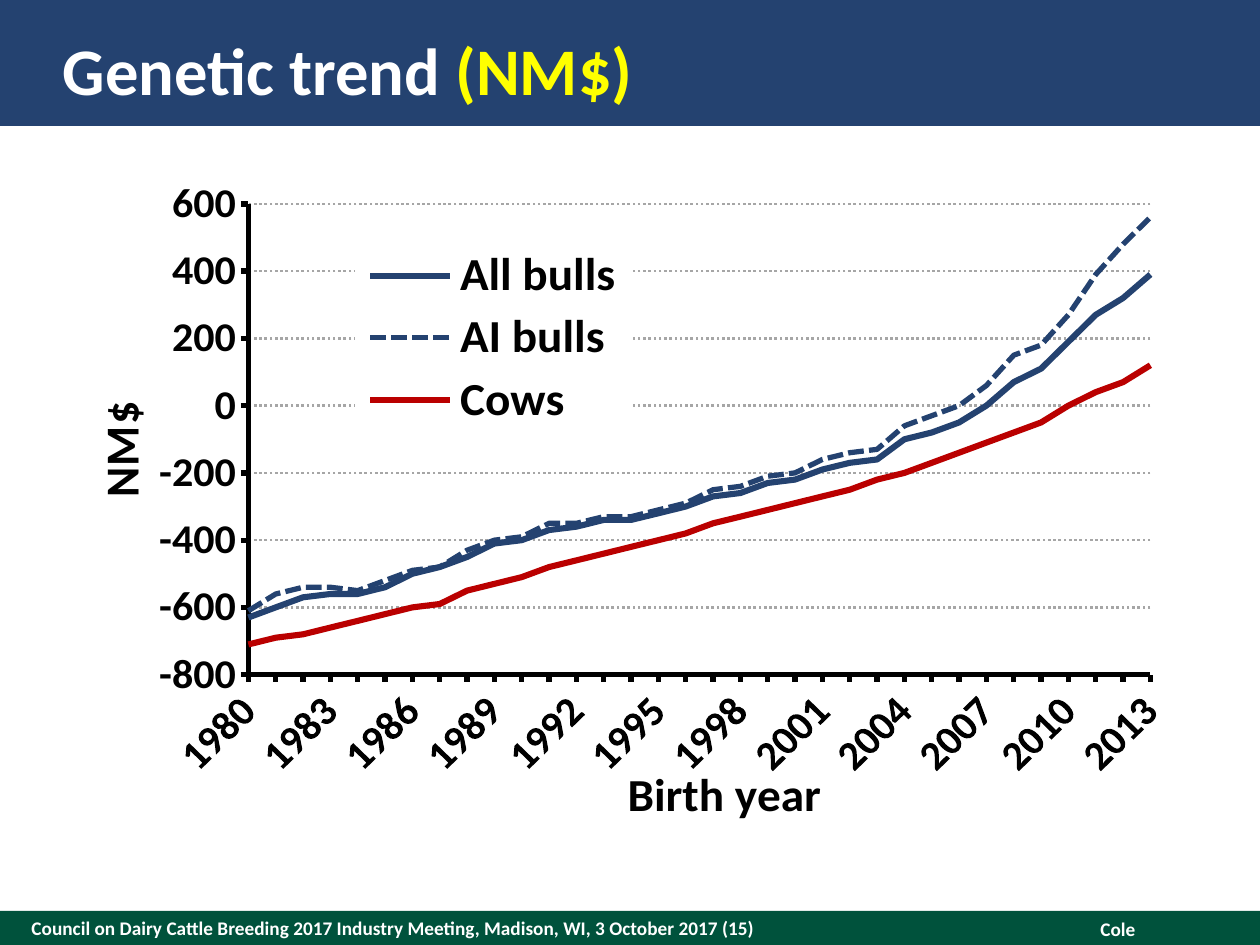
from dataclasses import dataclass
from typing import NamedTuple, Optional

from lxml.etree import SubElement
from pptx import Presentation
from pptx.chart.data import CategoryChartData
from pptx.dml.color import RGBColor
from pptx.enum.chart import XL_AXIS_CROSSES as Crosses, XL_CHART_TYPE as ChartType
from pptx.enum.chart import XL_LEGEND_POSITION as LegendPosition, XL_TICK_MARK as TickMark
from pptx.enum.chart import XL_TICK_LABEL_POSITION as LabelPosition
from pptx.enum.dml import MSO_LINE as Dash
from pptx.enum.shapes import MSO_SHAPE as Shape
from pptx.enum.text import MSO_ANCHOR as Anchor, PP_ALIGN as Align
from pptx.oxml import parse_xml
from pptx.oxml.ns import nsdecls, qn
from pptx.util import Inches, Pt

NAVY = RGBColor(0x24, 0x42, 0x70)
GREEN = RGBColor(0x00, 0x52, 0x3C)
RED = RGBColor(0xBA, 0x00, 0x00)
YELLOW = RGBColor(0xFF, 0xFF, 0x00)
WHITE = RGBColor(0xFF, 0xFF, 0xFF)
BLACK = RGBColor(0x00, 0x00, 0x00)
GRAY = RGBColor(0xA6, 0xA6, 0xA6)
FONT = "Calibri"


class Box(NamedTuple):
    left: float
    top: float
    width: float
    height: float


@dataclass
class Label:
    box: Box
    runs: list
    size: float
    align: Align = Align.LEFT
    margin: float = 0


@dataclass
class Trend:
    name: str
    values: list
    color: RGBColor
    width: float = 3.5
    dash: Optional[Dash] = None


MEETING = "Council on Dairy Cattle Breeding 2017 Industry Meeting, Madison, WI, 3 October 2017 (15)"
LABELS = [
    Label(Box(0.25, 7.23, 7, 0.27), [(MEETING, WHITE)], 11),
    Label(Box(7.11, 7.23, 2, 0.29), [("Cole", WHITE)], 11, Align.RIGHT, 0.1),
    Label(Box(0.5, 0.2, 9, 0.7), [("Genetic trend ", WHITE), ("(NM$)", YELLOW)], 38),
]
TRENDS = [
    Trend("All bulls", [
        -630, -600, -570, -560, -560, -540, -500, -480, -450, -410, -400, -370, -360, -340, -340, -320, -300,
        -270, -260, -230, -220, -190, -170, -160, -100, -80, -50, 0, 70, 110, 190, 270, 320, 390], NAVY),
    Trend("AI bulls", [
        -610, -560, -540, -540, -550, -520, -490, -480, -430, -400, -390, -350, -350, -330, -330, -310, -290,
        -250, -240, -210, -200, -160, -140, -130, -60, -30, 0, 60, 150, 180, 270, 390, 480, 560],
        NAVY, 3, Dash.SQUARE_DOT),
    Trend("Cows", [
        -710, -690, -680, -660, -640, -620, -600, -590, -550, -530, -510, -480, -460, -440, -420, -400, -380,
        -350, -330, -310, -290, -270, -250, -220, -200, -170, -140, -110, -80, -50, 0, 40, 70, 120], RED),
]


def set_font(font, size: float, color: Optional[RGBColor] = BLACK) -> None:
    font.name, font.size, font.bold = FONT, Pt(size), True
    if color is not None:
        font.color.rgb = color


def add_band(slide, box: Box, color: RGBColor) -> None:
    shape = slide.shapes.add_shape(Shape.RECTANGLE, *map(Inches, box))
    shape.shadow.inherit = False
    shape.fill.solid()
    shape.fill.fore_color.rgb = color
    shape.line.fill.background()


def add_label(slide, label: Label) -> None:
    frame = slide.shapes.add_textbox(*map(Inches, label.box)).text_frame
    frame.word_wrap = True
    frame.vertical_anchor = Anchor.MIDDLE
    frame.margin_left = frame.margin_right = Inches(label.margin)
    frame.margin_top = frame.margin_bottom = 0
    paragraph = frame.paragraphs[0]
    paragraph.alignment = label.align
    set_font(paragraph.font, label.size, None)
    for text, color in label.runs:
        run = paragraph.add_run()
        run.text = text
        run.font.color.rgb = color


def place(element, inner: bool = False, **fractions: float) -> None:
    for old in element.findall(qn("c:layout")):
        element.remove(old)
    layout = parse_xml(f"<c:layout {nsdecls('c')}><c:manualLayout/></c:layout>")
    settings = {"layoutTarget": "inner"} if inner else {}
    settings.update(xMode="edge", yMode="edge", **fractions)
    for key, value in settings.items():
        SubElement(layout[0], qn(f"c:{key}")).set("val", str(value))
    overlay = element.find(qn("c:overlay"))
    if overlay is None:
        element.insert(0, layout)
    else:
        overlay.addprevious(layout)


def style_axis(axis, title: str, x: float, y: float) -> None:
    axis.major_tick_mark, axis.minor_tick_mark = TickMark.OUTSIDE, TickMark.NONE
    axis.tick_label_position = LabelPosition.LOW
    axis.format.line.color.rgb = BLACK
    axis.format.line.width = Pt(3)
    set_font(axis.tick_labels.font, 24)
    frame = axis.axis_title.text_frame
    frame.text = title
    set_font(frame.paragraphs[0].font, 27)
    place(axis.axis_title._element, x=x, y=y)


def style_legend(chart) -> None:
    chart.has_legend = True
    legend = chart.legend
    legend.position = LegendPosition.RIGHT
    legend.include_in_layout = False
    set_font(legend.font, 27)
    place(legend._element, x=0.26, y=0.1, w=0.24, h=0.3)
    fill = parse_xml(
        f'<c:spPr {nsdecls("c", "a")}><a:solidFill><a:srgbClr val="{WHITE}"/>'
        "</a:solidFill><a:ln><a:noFill/></a:ln></c:spPr>")
    legend._element.find(qn("c:overlay")).addnext(fill)


def add_trend_chart(slide, box: Box) -> None:
    data = CategoryChartData()
    data.categories = [str(year) for year in range(1980, 2014)]
    for trend in TRENDS:
        data.add_series(trend.name, trend.values)
    chart = slide.shapes.add_chart(ChartType.LINE, *map(Inches, box), data).chart
    chart.has_title = False
    set_font(chart.font, 24)
    plot = chart.plots[0]
    plot.vary_by_categories = False
    for series, trend in zip(plot.series, TRENDS):
        series.smooth = False
        line = series.format.line
        line.color.rgb, line.width = trend.color, Pt(trend.width)
        if trend.dash is not None:
            line.dash_style = trend.dash
    years, merit = chart.category_axis, chart.value_axis
    style_axis(years, "Birth year", 0.49, 0.9)
    style_axis(merit, "NM$", 0.02, 0.34)
    years._element.find(f"{qn('c:txPr')}/{qn('a:bodyPr')}").set("rot", "-2700000")
    merit.axis_title.text_frame._txBody.find(qn("a:bodyPr")).set("rot", "-5400000")
    for name, step in (("tickLblSkip", 3), ("tickMarkSkip", 1)):
        skip = parse_xml(f'<c:{name} {nsdecls("c")} val="{step}"/>')
        years._element.find(qn("c:noMultiLvlLbl")).addprevious(skip)
    merit.minimum_scale, merit.maximum_scale, merit.major_unit = -800, 600, 200
    merit.crosses = Crosses.MINIMUM
    between = parse_xml(f'<c:crossBetween {nsdecls("c")} val="midCat"/>')
    merit._element.find(qn("c:crosses")).addnext(between)
    grid = merit.major_gridlines.format.line
    grid.color.rgb, grid.width, grid.dash_style = GRAY, Pt(1.5), Dash.ROUND_DOT
    style_legend(chart)
    place(chart._chartSpace.chart.plotArea, inner=True, x=0.167, y=0.041, w=0.786, h=0.735)


def main() -> None:
    """Build the genetic trend slide."""
    presentation = Presentation()
    presentation.slide_width, presentation.slide_height = Inches(10), Inches(7.5)
    slide = presentation.slides.add_slide(presentation.slide_layouts[6])
    add_band(slide, Box(0, 7.23, 10, 0.27), GREEN)
    add_band(slide, Box(0, 0, 10, 1), NAVY)
    for label in LABELS:
        add_label(slide, label)
    add_trend_chart(slide, Box(0.45, 1.41, 9.11, 5.24))
    presentation.save("out.pptx")


if __name__ == "__main__":
    main()
